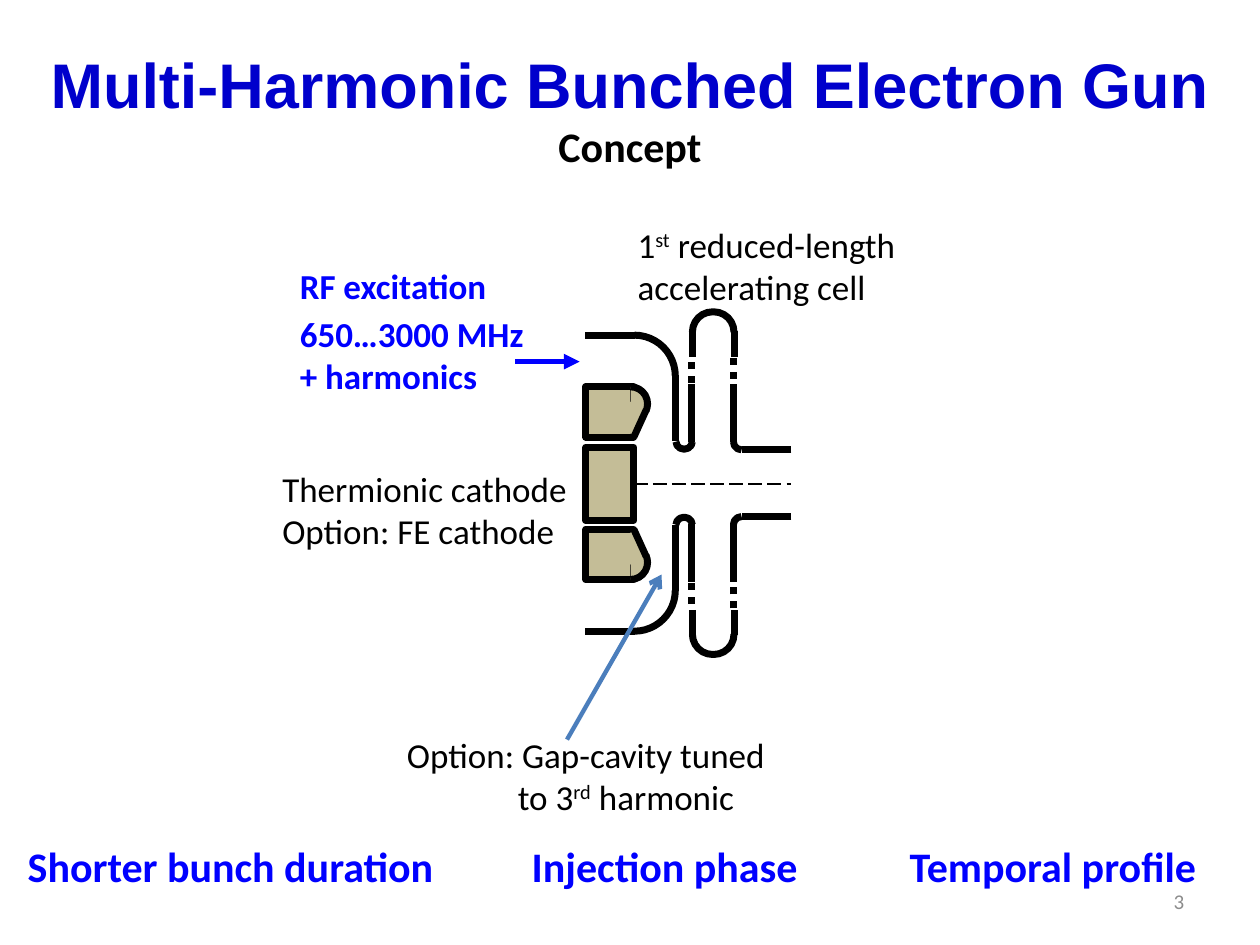
from dataclasses import dataclass

from lxml.etree import SubElement
from pptx import Presentation
from pptx.dml.color import RGBColor
from pptx.enum.dml import MSO_LINE as DASH
from pptx.enum.shapes import MSO_CONNECTOR, MSO_SHAPE as SHAPE
from pptx.enum.text import MSO_ANCHOR as ANCHOR, PP_ALIGN as ALIGN
from pptx.oxml.ns import qn
from pptx.util import Inches, Pt


@dataclass(frozen=True)
class Theme:
    black: str = "000000"
    title: str = "0000CC"
    accent: str = "0000FF"
    pointer: str = "4B7EBC"
    metal: str = "C4BD97"
    muted: str = "8C8C8C"
    title_font: str = "Arial"
    body_font: str = "Calibri"
    title_size: int = 36
    heading_size: int = 24
    label_size: int = 20
    number_size: int = 12
    wall: float = 4


THEME = Theme()
AXIS = 3.835  # height of the beam axis, about which the gun is symmetric

# Upper half of the gun: preset, box, format
UPPER_SHAPES = [
    (SHAPE.RECTANGLE, (4.65, 3.07, 0.38, 0.4), {"fill": THEME.metal}),
    (SHAPE.ARC, (4.87, 3.07, 0.27, 0.27), {"fill": THEME.metal, "adjust": (162, 15.415)}),
    (SHAPE.RECTANGLE, (4.89, 3.19, 0.18, 0.23),
     {"fill": THEME.metal, "rotation": 24.7, "outlined": False}),
    (SHAPE.ARC, (4.71, 2.66, 0.65, 0.65), {"adjust": (162, 215.85)}),
    (SHAPE.ARC, (5.82, 3.44, 0.13, 0.13), {"rotation": 180}),
    (SHAPE.LEFT_BRACKET, (5.58, 2.39, 0.16, 0.33), {"rotation": 90, "adjust": (1,)}),
    (SHAPE.LEFT_BRACKET, (5.4, 3.47, 0.06, 0.13), {"rotation": 270, "adjust": (1.28,)}),
    (SHAPE.DOUBLE_BRACKET, (5.49, 3.05, 0.33, 0.46), {"adjust": (0,)}),
    (SHAPE.DOUBLE_BRACKET, (5.49, 2.84, 0.33, 0.2), {"adjust": (0,), "dash": DASH.ROUND_DOT}),
    (SHAPE.DOUBLE_BRACKET, (5.5, 2.63, 0.33, 0.2), {"adjust": (0,)}),
]
UPPER_LINES = [
    ((5.04, 2.66), (4.64, 2.66)),
    ((5.36, 2.98), (5.36, 3.5)),
    ((6.28, 3.57), (5.89, 3.57)),
    ((5.13, 3.25), (5.03, 3.47)),
]


def rgb(colour):
    return RGBColor.from_string(colour)


def add_part(slide, preset, box, fill=None, outlined=True, dash=None,
             rotation=0, adjust=(), mirrored=False):
    """Add one piece of the gun, reflected in the beam axis if mirrored."""
    left, top, width, height = box
    if mirrored:
        top = 2 * AXIS - top - height
    part = slide.shapes.add_shape(preset, *map(Inches, (left, top, width, height)))
    part.shadow.inherit = False
    part.rotation = -rotation % 360 if mirrored else rotation
    if mirrored:
        part.element.spPr.get_or_add_xfrm().set("flipV", "1")
    for index, value in enumerate(adjust):
        part.adjustments[index] = value
    if fill:
        part.fill.solid()
        part.fill.fore_color.rgb = rgb(fill)
    else:
        part.fill.background()
    if outlined:
        part.line.color.rgb = rgb(THEME.black)
        part.line.width = Pt(THEME.wall)
        if dash:
            part.line.dash_style = dash
    else:
        part.line.fill.background()


def add_line(slide, start, end, colour=THEME.black, width=THEME.wall, dash=None, arrow=None):
    line = slide.shapes.add_connector(MSO_CONNECTOR.STRAIGHT, *map(Inches, start + end))
    line.line.color.rgb = rgb(colour)
    line.line.width = Pt(width)
    if dash:
        line.line.dash_style = dash
    if arrow:
        SubElement(line.line._get_or_add_ln(), qn("a:tailEnd"), type=arrow)
    SubElement(line.element.spPr, qn("a:effectLst"))


def add_text(slide, box, lines, size=THEME.label_size, colour=THEME.black, bold=False,
             font=THEME.body_font, align=ALIGN.LEFT):
    """Add a text box; words between carets are set as superscript."""
    frame = slide.shapes.add_textbox(*map(Inches, box)).text_frame
    frame.word_wrap = True
    for side in ("left", "top", "right", "bottom"):
        setattr(frame, f"margin_{side}", 0)
    for index, line in enumerate(lines):
        paragraph = frame.add_paragraph() if index else frame.paragraphs[0]
        paragraph.alignment = align
        for part, words in enumerate(line.split("^")):
            run = paragraph.add_run()
            run.text = words
            run.font.color.rgb = rgb(colour)
            for name, value in {"name": font, "size": Pt(size), "bold": bold}.items():
                setattr(run.font, name, value)
            if part % 2:
                run._r.get_or_add_rPr().set("baseline", "30000")
    return frame


def set_tabs(paragraph, stops):
    tabs = SubElement(paragraph._p.get_or_add_pPr(), qn("a:tabLst"))
    for stop in stops:
        SubElement(tabs, qn("a:tab"), pos=str(Inches(stop)), algn="l")


def add_headings(slide):
    add_text(slide, (0, 0.36, 10, 0.58), ["Multi-Harmonic Bunched Electron Gun"],
             THEME.title_size, THEME.title, True, THEME.title_font, ALIGN.CENTER)
    add_text(slide, (0, 0.96, 10, 0.44), ["Concept"],
             THEME.heading_size, bold=True, align=ALIGN.CENTER)


def add_gun(slide):
    for mirrored in (True, False):
        for preset, box, style in UPPER_SHAPES:
            add_part(slide, preset, box, mirrored=mirrored, **style)
        for ends in UPPER_LINES:
            start, end = [(x, 2 * AXIS - y if mirrored else y) for x, y in ends]
            add_line(slide, start, end)
    add_part(slide, SHAPE.RECTANGLE, (4.65, 3.55, 0.38, 0.58), fill=THEME.metal)
    add_line(slide, (5.03, 3.84), (6.28, 3.84), width=1, dash=DASH.LONG_DASH)


def add_labels(slide):
    add_text(slide, (2.24, 3.71, 2.38, 0.79), ["Thermionic cathode", "Option: FE cathode"])
    excitation = add_text(slide, (2.38, 2.05, 2.04, 1.08),
                          ["RF excitation", "650…3000 MHz", "+ harmonics"],
                          colour=THEME.accent, bold=True)
    for paragraph in excitation.paragraphs[:2]:
        paragraph.line_spacing = 1.15
    gap_cavity = add_text(slide, (3.23, 5.82, 3.05, 0.66),
                          ["Option: Gap-cavity tuned", "to 3^rd^ harmonic"])
    gap_cavity.paragraphs[1]._p.get_or_add_pPr().set("marL", str(Inches(0.88)))
    add_text(slide, (5.06, 1.77, 2.12, 0.66), ["1^st^ reduced-length accelerating cell"])
    add_line(slide, (4.5, 5.87), (5.25, 4.56), THEME.pointer, 2.5, arrow="arrow")
    add_line(slide, (4.09, 2.87), (4.6, 2.87), THEME.accent, 3, arrow="triangle")


def add_footer(slide):
    benefits = add_text(slide, (0.22, 6.67, 9.4, 0.49),
                        ["Shorter bunch duration\tInjection phase\tTemporal profile"],
                        THEME.heading_size, THEME.accent, True)
    set_tabs(benefits.paragraphs[0], (4, 7))
    number = add_text(slide, (7.17, 6.95, 2.23, 0.4), ["3"],
                      THEME.number_size, THEME.muted, align=ALIGN.RIGHT)
    number.vertical_anchor = ANCHOR.MIDDLE


def main():
    deck = Presentation()
    deck.slide_width, deck.slide_height = Inches(10), Inches(7.5)
    slide = deck.slides.add_slide(deck.slide_layouts[6])
    add_headings(slide)
    add_gun(slide)
    add_labels(slide)
    add_footer(slide)
    deck.save("out.pptx")


if __name__ == "__main__":
    main()
